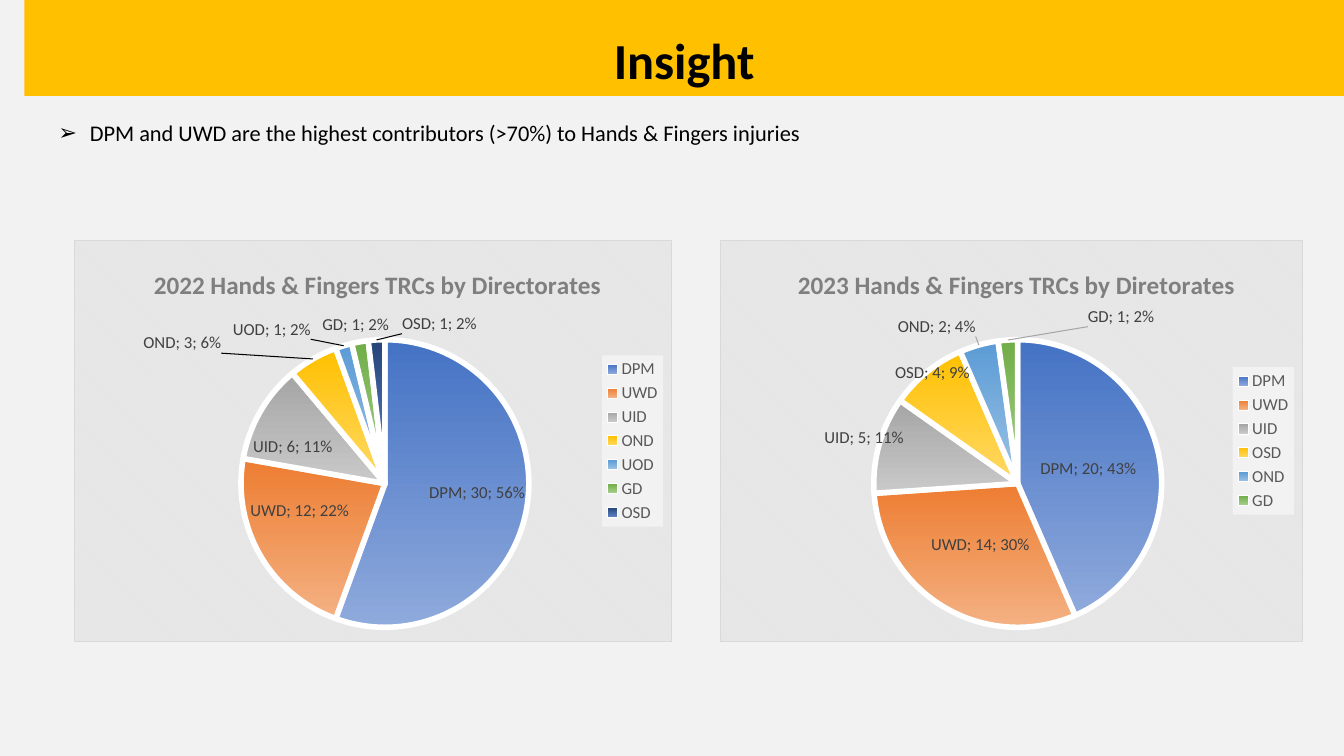
from copy import deepcopy
from math import cos, pi, sin

from pptx import Presentation
from pptx.chart.data import CategoryChartData
from pptx.dml.color import RGBColor
from pptx.enum.chart import XL_CHART_TYPE, XL_LABEL_POSITION, XL_LEGEND_POSITION
from pptx.enum.text import MSO_ANCHOR, MSO_AUTO_SIZE, PP_ALIGN
from pptx.oxml import parse_xml
from pptx.oxml.ns import nsdecls, qn
from pptx.util import Pt

# Content: label centres are slide points, None keeps the slice centre
TITLE = "Insight"
BULLET = "DPM and UWD are the highest contributors (>70%) to Hands & Fingers injuries"
PIES = [
    {"title": "2023 Hands & Fingers TRCs by Diretorates",
     "left": 514.5, "width": 416, "center_x": 727, "leader": "A6A6A6",
     "rows": [("DPM", 20, None), ("UWD", 14, None), ("UID", 5, (617, 313)),
              ("OSD", 4, (666, 266)), ("OND", 2, (669, 233)), ("GD", 1, (801, 226))]},
    {"title": "2022 Hands & Fingers TRCs by Directorates",
     "left": 53, "width": 427, "center_x": 275, "leader": "000000",
     "rows": [("DPM", 30, (341, 352)), ("UWD", 12, (214, 365)), ("UID", 6, (209, 319)),
              ("OND", 3, (130, 245)), ("UOD", 1, (194, 235)), ("GD", 1, (254, 232)),
              ("OSD", 1, (314, 231))]},
]
C = {"page": "F2F2F2", "band": "FFC000", "text": "000000", "title": "7F7F7F",
     "legend": "595959", "label": "404040", "border": "D9D9D9",
     "stripe": "EBEBEB", "panel": "E6E6E6", "white": "FFFFFF"}
SLICES = [("4472C4", "8FAADC"), ("ED7D31", "F4B183"), ("A5A5A5", "C9C9C9"),
          ("FFC000", "FFD966"), ("5B9BD5", "9DC3E6"), ("70AD47", "A9D18E"),
          ("264478", "5F86CC")]
FONT = "Calibri"
TOP, HEIGHT = 171.5, 287
CENTER_Y, RADIUS = 345.5, 103


def rgb(name):
    return RGBColor.from_string(C.get(name, name))


def style(font, size, color, bold=False):
    font.name, font.size, font.bold = FONT, Pt(size), bold
    font.color.rgb = rgb(color)


def place(shape, left, top, width, height):
    shape.left, shape.top, shape.width, shape.height = map(Pt, (left, top, width, height))


def c_xml(tag, body):
    return parse_xml(f'<c:{tag} {nsdecls("c", "a")}>{body}</c:{tag}>')


def layout(**vals):
    target = '<c:layoutTarget val="inner"/>' if "w" in vals else ""
    modes = '<c:xMode val="edge"/><c:yMode val="edge"/>' if vals.pop("edge", False) else ""
    body = "".join(f'<c:{k} val="{v:.4f}"/>' for k, v in vals.items())
    return c_xml("layout", f"<c:manualLayout>{target}{modes}{body}</c:manualLayout>")


def set_layout(parent, index, **vals):
    for old in parent.findall(qn("c:layout")):
        parent.remove(old)
    parent.insert(index, layout(edge=True, **vals))


def add_labels(series, pie):
    labels = series.data_labels
    labels.show_value = labels.show_category_name = labels.show_percentage = True
    labels.position = XL_LABEL_POSITION.CENTER
    style(labels.font, 12, "label")
    el = labels._element
    txt = el.find(qn("c:txPr"))
    txt.find(qn("a:bodyPr")).set("wrap", "none")
    sep = c_xml("separator", "; ")
    el.find(qn("c:showBubbleSize")).addnext(sep) if el.find(
        qn("c:showBubbleSize")) is not None else el.find(qn("c:showPercent")).addnext(sep)
    lead = el.find(qn("c:showLeaderLines"))
    if lead is None:
        lead = parse_xml(f'<c:showLeaderLines {nsdecls("c")} val="1"/>')
        el.append(lead)
    lead.set("val", "1")
    lead.addnext(c_xml("leaderLines", '<c:spPr><a:ln w="9525"><a:solidFill><a:srgbClr val="'
                       + pie["leader"] + '"/></a:solidFill></a:ln></c:spPr>'))
    # Moved labels: offset from the middle of each slice
    total, done, n = sum(v for _, v, _ in pie["rows"]), 0, 0
    for i, (_, value, spot) in enumerate(pie["rows"]):
        angle = 2 * pi * (done + value / 2) / total
        done += value
        if spot is None:
            continue
        dx = spot[0] - pie["center_x"] - RADIUS / 2 * sin(angle)
        dy = spot[1] - CENTER_Y + RADIUS / 2 * cos(angle)
        shows = "".join(f'<c:show{k} val="{v}"/>' for k, v in (
            ("LegendKey", 0), ("Val", 1), ("CatName", 1), ("SerName", 0),
            ("Percent", 1), ("BubbleSize", 0)))
        lbl = c_xml("dLbl", f'<c:idx val="{i}"/><c:dLblPos val="ctr"/>{shows}'
                            '<c:separator>; </c:separator>')
        lbl.insert(1, layout(x=dx / pie["width"], y=dy / HEIGHT))
        lbl.insert(2, deepcopy(txt))
        el.insert(n, lbl)
        n += 1


def add_pie(s, pie):
    data = CategoryChartData()
    data.categories = [name for name, _, _ in pie["rows"]]
    data.add_series("Series 1", [value for _, value, _ in pie["rows"]])
    width = pie["width"]
    chart = s.shapes.add_chart(XL_CHART_TYPE.PIE, Pt(pie["left"]), Pt(TOP),
                               Pt(width), Pt(HEIGHT), data).chart
    style(chart.font, 10, "text")

    # Title and plot position
    chart.has_title = True
    r = chart.chart_title.text_frame.paragraphs[0].add_run()
    r.text = pie["title"]
    style(r.font, 18, "title", True)
    set_layout(chart.chart_title._element, 1, x=0.125, y=0.055)
    plot = chart.plots[0]
    plot.vary_by_categories = True
    set_layout(plot._element.getparent(), 0,
               x=(pie["center_x"] - RADIUS - pie["left"]) / width,
               y=(CENTER_Y - RADIUS - TOP) / HEIGHT,
               w=2 * RADIUS / width, h=2 * RADIUS / HEIGHT)

    # Slices
    series = plot.series[0]
    for i in range(len(pie["rows"])):
        fmt = series.points[i].format
        fmt.fill.gradient()
        fmt.fill.gradient_angle = 270
        for stop, color in zip(fmt.fill.gradient_stops, SLICES[i]):
            stop.color.rgb = rgb(color)
        fmt.line.color.rgb = rgb("white")
        fmt.line.width = Pt(4)
    add_labels(series, pie)

    # Legend with a pale panel
    chart.has_legend = True
    legend = chart.legend
    legend.position = XL_LEGEND_POSITION.RIGHT
    legend.include_in_layout = False
    style(legend.font, 12, "legend")
    legend._element.find(qn("c:txPr")).addprevious(c_xml(
        "spPr", f'<a:solidFill><a:srgbClr val="{C["page"]}"/></a:solidFill>'))

    # Striped chart background
    fill = (f'<a:pattFill prst="dkDnDiag"><a:fgClr><a:srgbClr val="{C["stripe"]}"/></a:fgClr>'
            f'<a:bgClr><a:srgbClr val="{C["panel"]}"/></a:bgClr></a:pattFill>')
    line = f'<a:ln w="9525"><a:solidFill><a:srgbClr val="{C["border"]}"/></a:solidFill></a:ln>'
    chart._chartSpace.find(qn("c:chart")).addnext(c_xml("spPr", fill + line))


prs = Presentation()
prs.slide_width, prs.slide_height = Pt(960), Pt(540)
s = prs.slides.add_slide(prs.slide_layouts[1])
s.background.fill.solid()
s.background.fill.fore_color.rgb = rgb("page")

# Title band
sp = s.shapes.title
place(sp, 17.5, 0, 942.5, 68.5)
sp.fill.solid()
sp.fill.fore_color.rgb = rgb("band")
tf = sp.text_frame
tf.vertical_anchor = MSO_ANCHOR.BOTTOM
p = tf.paragraphs[0]
p.alignment, p.line_spacing = PP_ALIGN.CENTER, 0.9
r = p.add_run()
r.text = TITLE
style(r.font, 36, "text", True)

# Key message
sp = s.placeholders[1]
place(sp, 34.5, 81.5, 910, 26.5)
tf = sp.text_frame
tf.auto_size = MSO_AUTO_SIZE.NONE
p = tf.paragraphs[0]
p.space_before = Pt(0)
pPr = p._p.get_or_add_pPr()
pPr.set("marL", str(Pt(22.5)))
pPr.set("indent", str(-Pt(22.5)))
pPr.append(parse_xml(f'<a:buChar {nsdecls("a")} char="➢"/>'))
r = p.add_run()
r.text = BULLET
style(r.font, 16, "text")

for pie in PIES:
    add_pie(s, pie)

prs.save("out.pptx")
